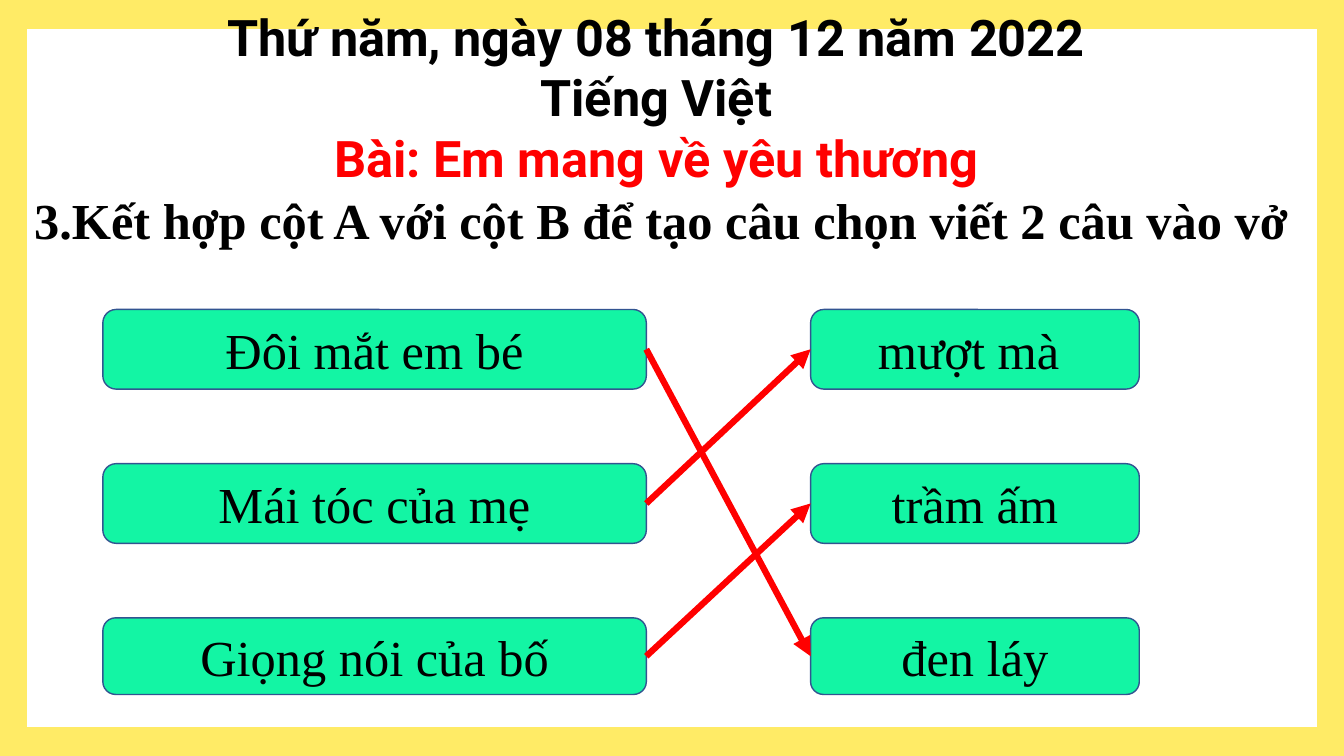
import pptx
import pptx.dml.color
import pptx.enum.shapes
import pptx.enum.text
import pptx.oxml.ns
import pptx.util
from dataclasses import dataclass
from lxml import etree

Inches = pptx.util.Inches
Pt = pptx.util.Pt
Shape = pptx.enum.shapes.MSO_SHAPE
Align = pptx.enum.text.PP_ALIGN
Anchor = pptx.enum.text.MSO_ANCHOR
LEFT_SIDE, RIGHT_SIDE = 1, 3


@dataclass(frozen=True)
class Theme:
    frame: str = "FFEB66"
    paper: str = "FFFFFF"
    box: str = "13F5A4"
    outline: str = "325491"
    accent: str = "FF0000"
    ink: str = "000000"
    heading_font: str = "Roboto"
    body_font: str = "Times New Roman"
    text_size: int = 36
    outline_width: float = 1
    arrow_width: float = 4.5


def color(value):
    return pptx.dml.color.RGBColor.from_string(value)


def set_formats(target, formats):
    for name, value in formats.items():
        setattr(target, name, value)


class SlideBuilder:
    def __init__(self, slide, theme):
        self.slide = slide
        self.theme = theme

    def set_text(self, shape, lines, font, bold=False, align=Align.CENTER,
                 anchor=Anchor.MIDDLE, space_after=0):
        """Fill a shape with (text, colour) paragraphs."""
        frame = shape.text_frame
        set_formats(frame, {"word_wrap": True, "vertical_anchor": anchor,
                            "auto_size": pptx.enum.text.MSO_AUTO_SIZE.NONE})
        for index, (text, ink) in enumerate(lines):
            paragraph = frame.add_paragraph() if index else frame.paragraphs[0]
            set_formats(paragraph, {"alignment": align, "space_before": Pt(0),
                                    "space_after": Pt(space_after), "line_spacing": 1.0})
            run = paragraph.add_run()
            run.text = text
            set_formats(run.font, {"name": font, "size": Pt(self.theme.text_size),
                                   "bold": bold})
            run.font.color.rgb = color(ink)

    def panel(self, kind, left, top, width, height, fill, outline=None):
        shape = self.slide.shapes.add_shape(
            kind, Inches(left), Inches(top), Inches(width), Inches(height))
        shape.shadow.inherit = False
        shape.fill.solid()
        shape.fill.fore_color.rgb = color(fill)
        if outline:
            shape.line.color.rgb = color(outline)
            shape.line.width = Pt(self.theme.outline_width)
        else:
            shape.line.fill.background()
        return shape

    def title(self, left, top, width, height, lines):
        """Place the title placeholder in front of the panels."""
        title = self.slide.shapes.title
        set_formats(title, {"left": Inches(left), "top": Inches(top),
                            "width": Inches(width), "height": Inches(height)})
        self.set_text(title, lines, self.theme.heading_font, bold=True, anchor=Anchor.TOP)
        title._element.getparent().append(title._element)

    def question(self, left, top, width, height, text):
        textbox = self.slide.shapes.add_textbox(
            Inches(left), Inches(top), Inches(width), Inches(height))
        self.set_text(textbox, [(text, self.theme.ink)], self.theme.body_font, bold=True,
                      align=Align.LEFT, anchor=Anchor.TOP, space_after=6)

    def phrase_box(self, left, top, width, height, text):
        box = self.panel(Shape.ROUNDED_RECTANGLE, left, top, width, height,
                         self.theme.box, self.theme.outline)
        self.set_text(box, [(text, self.theme.ink)], self.theme.body_font)
        return box

    def match_arrow(self, start, end):
        arrow = self.slide.shapes.add_connector(
            pptx.enum.shapes.MSO_CONNECTOR.STRAIGHT, 0, 0, 0, 0)
        arrow.begin_connect(start, RIGHT_SIDE)
        arrow.end_connect(end, LEFT_SIDE)
        arrow.line.color.rgb = color(self.theme.accent)
        arrow.line.width = Pt(self.theme.arrow_width)
        qn = pptx.oxml.ns.qn
        properties = arrow._element.spPr
        etree.SubElement(properties.find(qn("a:ln")), qn("a:tailEnd"), type="triangle")
        etree.SubElement(properties, qn("a:effectLst"))


def main():
    presentation = pptx.Presentation()
    presentation.slide_width = Inches(13.33)
    presentation.slide_height = Inches(7.5)
    theme = Theme()
    builder = SlideBuilder(
        presentation.slides.add_slide(presentation.slide_layouts[5]), theme)

    builder.panel(Shape.RECTANGLE, 0, 0, 13.33, 7.5, theme.frame)
    builder.panel(Shape.RECTANGLE, 0.27, 0.29, 12.79, 6.92, theme.paper)
    builder.question(0.24, 1.83, 12.85, 0.71,
                     "3.Kết hợp cột A với cột B để tạo câu chọn viết 2 câu vào vở")

    rows = [("Đôi mắt em bé", "mượt mà ", 0.79),
            ("Mái tóc của mẹ", "trầm ấm", 0.79),
            ("Giọng nói của bố", "đen láy", 0.76)]
    column_a, column_b = [], []
    for index, (subject, description, height) in enumerate(rows):
        top = 3.07 + 1.53 * index
        column_a.append(builder.phrase_box(1.02, top, 5.39, height, subject))
        column_b.append(builder.phrase_box(8.04, top, 3.26, height, description))

    for subject_row, description_row in [(1, 0), (0, 2), (2, 1)]:
        builder.match_arrow(column_a[subject_row], column_b[description_row])

    builder.title(1.69, 0.01, 9.64, 1.92, [
        ("Thứ năm, ngày 08 tháng 12 năm 2022", theme.ink),
        ("Tiếng Việt", theme.ink),
        ("Bài: Em mang về yêu thương", theme.accent)])
    presentation.save("out.pptx")


if __name__ == "__main__":
    main()
